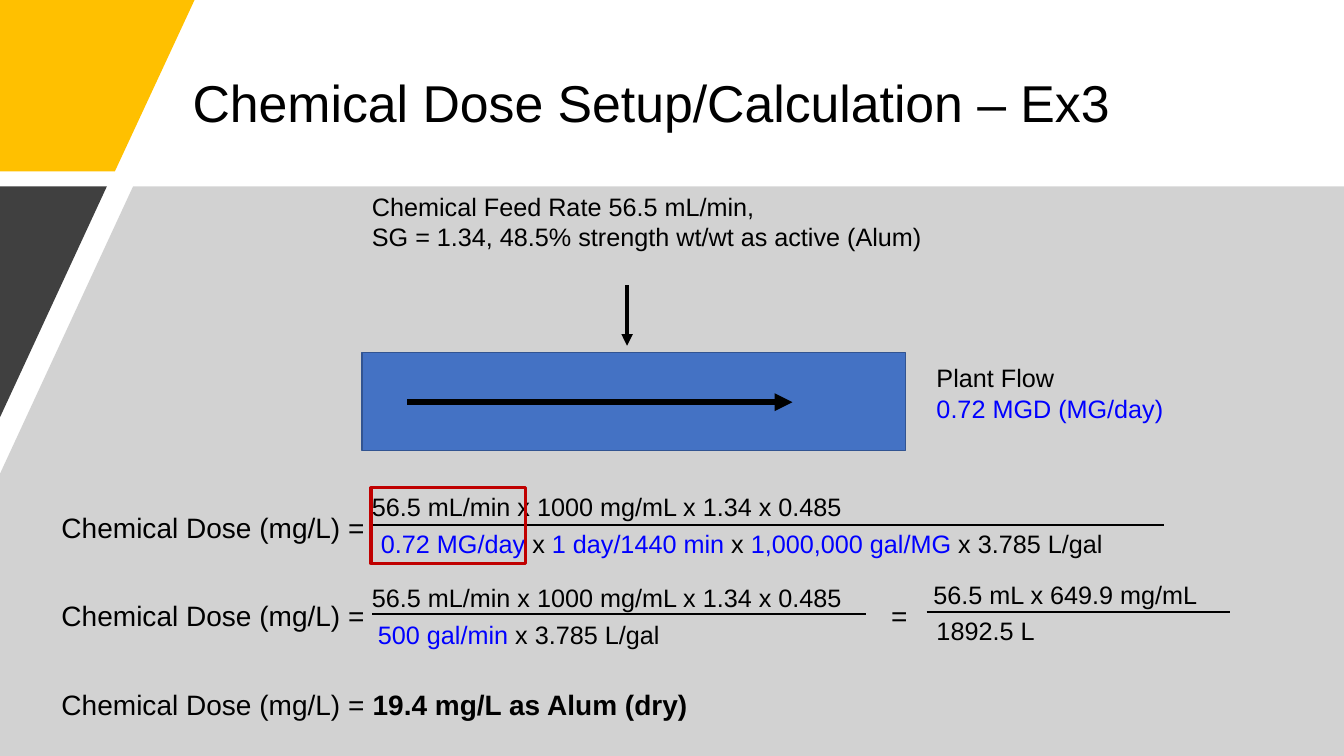
from lxml.etree import SubElement
from pptx import Presentation
from pptx.dml.color import RGBColor
from pptx.enum.shapes import MSO_CONNECTOR, MSO_SHAPE
from pptx.enum.text import MSO_ANCHOR, MSO_AUTO_SIZE, PP_ALIGN
from pptx.oxml.ns import qn
from pptx.util import Inches, Pt

BLACK = RGBColor(0x00, 0x00, 0x00)
BLUE = RGBColor(0x00, 0x00, 0xFF)
GOLD = RGBColor(0xFF, 0xC0, 0x00)
GRAY = RGBColor(0xA6, 0xA6, 0xA6)
CHARCOAL = RGBColor(0x40, 0x40, 0x40)
PIPE_FILL = RGBColor(0x44, 0x72, 0xC4)
PIPE_EDGE = RGBColor(0x32, 0x54, 0x91)
RED = RGBColor(0xC0, 0x00, 0x00)
FONT = "Arial"
WIDTH, HEIGHT = 13.33, 7.5
BAND_TOP = 1.85

# Content: each line is a list of (text, colour) pieces
TITLE = "Chemical Dose Setup/Calculation – Ex3"
DOSE = "Chemical Dose (mg/L) ="
DOSE_LINES = [(DOSE, ""), (DOSE, ""), (DOSE + " ", "19.4 mg/L as Alum (dry)")]
EQUALS = [[("=", BLACK)]]
FEED = [
    [("Chemical Feed Rate 56.5 mL/min,", BLACK)],
    [("SG = 1.34, 48.5% strength wt/wt as active (Alum)", BLACK)],
]
FLOW = [[("Plant Flow", BLACK)], [("0.72 MGD (MG/day)", BLUE)]]
FEED_RATE = [("56.5 mL/min x 1000 mg/mL x 1.34 x 0.485", BLACK)]

# Fractions: left, top, width, denominator indent, bar (start, end, y), lines
FRACTIONS = [
    (3.59, 4.83, 7.74, 0.09, (3.67, 11.54, 5.21), FEED_RATE, [
        ("0.72 MG/day ", BLUE), ("x ", BLACK), ("1 day/1440 min ", BLUE),
        ("x ", BLACK), ("1,000,000 gal/MG ", BLUE), ("x 3.785 L/gal", BLACK)]),
    (3.59, 5.73, 4.94, 0.06, (3.69, 8.59, 6.09), FEED_RATE, [
        ("500 gal/min ", BLUE), ("x 3.785 L/gal", BLACK)]),
    (9.16, 5.7, 2.96, 0.03, (9.19, 12.2, 6.07),
     [("56.5 mL x 649.9 mg/mL", BLACK)], [("1892.5 L", BLACK)]),
]
FRACTION_STEP = 0.36

# Background pieces: points, colour, opacity in percent
PANELS = [
    ([(0, 0), (1.93, 0), (1.14, 1.7), (0, 1.7)], GOLD, 100),
    ([(1.32, BAND_TOP), (WIDTH, BAND_TOP), (WIDTH, HEIGHT), (0, HEIGHT), (0, 4.7)], GRAY, 50),
    ([(0, BAND_TOP), (1.06, BAND_TOP), (0, 4.14)], CHARCOAL, 100),
]


def place(shape, left, top, width, height):
    shape.left, shape.top = Inches(left), Inches(top)
    shape.width, shape.height = Inches(width), Inches(height)


def add_run(paragraph, text, size, color, bold=False):
    run = paragraph.add_run()
    run.text = text
    run.font.name, run.font.size, run.font.bold = FONT, Pt(size), bold
    run.font.color.rgb = color


def add_panel(slide, points, color, opacity):
    builder = slide.shapes.build_freeform(*map(Inches, points[0]))
    builder.add_line_segments([tuple(map(Inches, point)) for point in points[1:]], close=True)
    panel = builder.convert_to_shape()
    panel.shadow.inherit = False
    panel.line.fill.background()
    panel.fill.solid()
    panel.fill.fore_color.rgb = color
    if opacity < 100:
        fill_color = panel.element.spPr.find(qn("a:solidFill"))[0]
        SubElement(fill_color, qn("a:alpha")).set("val", str(opacity * 1000))


def add_box(slide, left, top, width, height, edge, weight, fill=None):
    box = slide.shapes.add_shape(
        MSO_SHAPE.RECTANGLE, *map(Inches, (left, top, width, height)))
    box.shadow.inherit = False
    box.line.color.rgb, box.line.width = edge, Pt(weight)
    if fill is None:
        box.fill.background()
    else:
        box.fill.solid()
        box.fill.fore_color.rgb = fill


def add_line(slide, start, end, weight, arrow=False):
    line = slide.shapes.add_connector(
        MSO_CONNECTOR.STRAIGHT, *map(Inches, start + end))
    line.line.color.rgb, line.line.width = BLACK, Pt(weight)
    properties = line.element.spPr
    if arrow:
        SubElement(properties.find(qn("a:ln")), qn("a:tailEnd")).set("type", "triangle")
    SubElement(properties, qn("a:effectLst"))


def add_text(slide, left, top, width, lines, size=18):
    height = 0.1 + len(lines) * size / 60
    frame = slide.shapes.add_textbox(
        *map(Inches, (left, top, width, height))).text_frame
    frame.word_wrap = True
    frame.auto_size = MSO_AUTO_SIZE.SHAPE_TO_FIT_TEXT
    for index, pieces in enumerate(lines):
        paragraph = frame.add_paragraph() if index else frame.paragraphs[0]
        for text, color in pieces:
            add_run(paragraph, text, size, color)


def fill_title(title):
    place(title, 1.81, 0.4, 10.24, 1.3)
    frame = title.text_frame
    frame.vertical_anchor = MSO_ANCHOR.MIDDLE
    frame.auto_size = MSO_AUTO_SIZE.NONE
    paragraph = frame.paragraphs[0]
    paragraph.alignment, paragraph.line_spacing = PP_ALIGN.LEFT, 0.9
    add_run(paragraph, TITLE, 37, BLACK)


def fill_body(body):
    place(body, 0.51, 5.05, 11.55, 2.37)
    frame = body.text_frame
    frame.auto_size = MSO_AUTO_SIZE.NONE
    for index, (label, result) in enumerate(DOSE_LINES):
        paragraph = frame.add_paragraph() if index else frame.paragraphs[0]
        paragraph.line_spacing = 0.9
        paragraph.space_before = Pt(41.75 if index else 0)
        properties = paragraph._p.get_or_add_pPr()
        properties.set("marL", "0")
        properties.set("indent", "0")
        SubElement(properties, qn("a:buNone"))
        add_run(paragraph, label, 20, BLACK)
        if result:
            add_run(paragraph, result, 20, BLACK, bold=True)


def main():
    presentation = Presentation()
    presentation.slide_width, presentation.slide_height = Inches(WIDTH), Inches(HEIGHT)
    slide = presentation.slides.add_slide(presentation.slide_layouts[1])
    title, body = slide.placeholders

    # Background, title and dose lines in front of it
    for points, color, opacity in PANELS:
        add_panel(slide, points, color, opacity)
    fill_title(title)
    fill_body(body)
    for placeholder in (title, body):
        placeholder.element.getparent().append(placeholder.element)

    # Pipe with flow arrow and chemical feed arrow
    add_box(slide, 3.59, 3.5, 5.39, 0.97, PIPE_EDGE, 1, PIPE_FILL)
    add_line(slide, (4.04, 3.99), (7.86, 3.99), 4.25, arrow=True)
    add_line(slide, (6.22, 2.83), (6.22, 3.43), 2.75, arrow=True)
    add_text(slide, 3.59, BAND_TOP, 7.79, FEED)
    add_text(slide, 9.19, 3.55, 2.6, FLOW)

    # Fractions and the equals sign between the last two
    for left, top, width, indent, (start, end, bar), numerator, denominator in FRACTIONS:
        add_text(slide, left, top, width, [numerator])
        add_text(slide, left + indent, top + FRACTION_STEP, width - indent, [denominator])
        add_line(slide, (start, bar), (end, bar), 1.5)
    add_text(slide, 8.74, 5.89, 0.4, EQUALS, size=20)

    # Highlight around the converted units
    add_box(slide, 3.68, 4.84, 1.53, 0.75, RED, 2.25)
    presentation.save("out.pptx")


if __name__ == "__main__":
    main()
